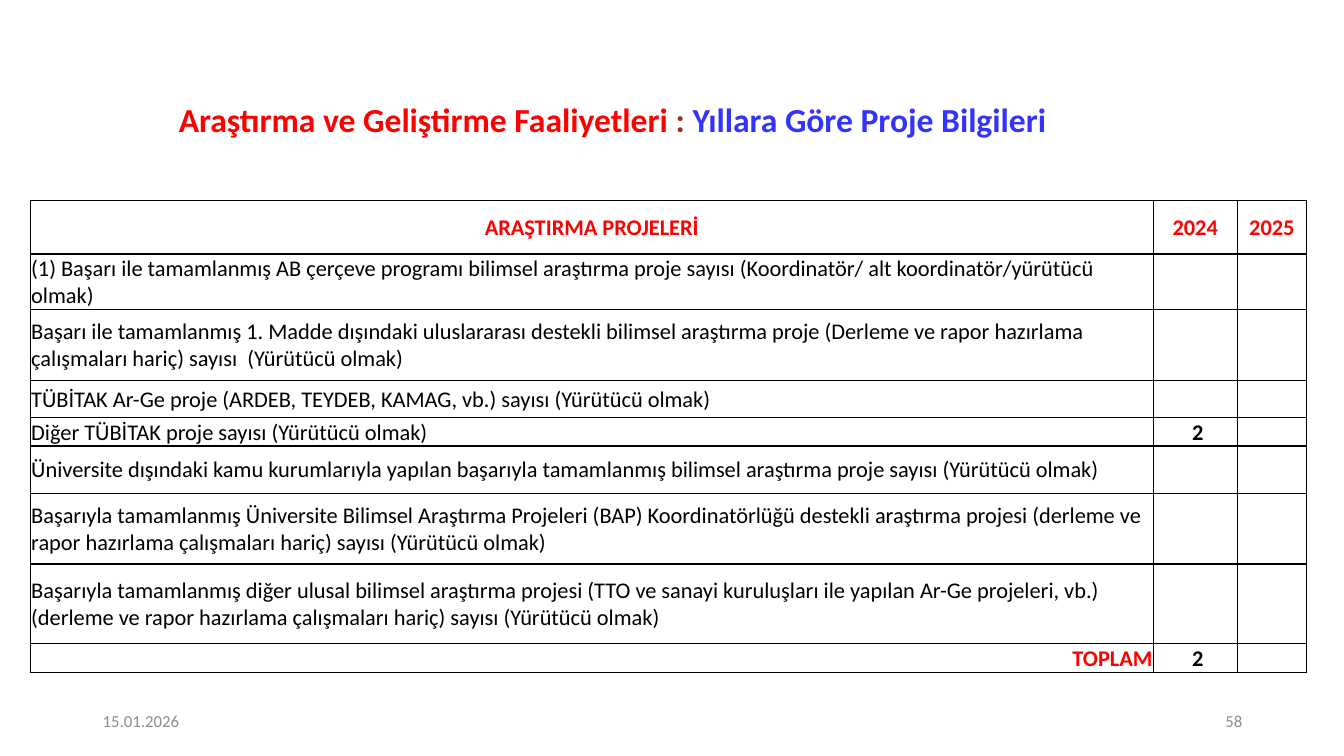
from typing import NamedTuple

from pptx import Presentation
from pptx.dml.color import RGBColor
from pptx.enum.text import MSO_ANCHOR as ANCHOR, PP_ALIGN as ALIGN
from pptx.oxml.xmlchemy import OxmlElement
from pptx.util import Inches, Pt

FONT = "Calibri"
RED = RGBColor(0xFF, 0x00, 0x00)
MAROON = RGBColor(0x96, 0x2E, 0x2E)
BLUE = RGBColor(0x33, 0x33, 0xFF)
BLACK = RGBColor(0x00, 0x00, 0x00)
GRAY = RGBColor(0x8C, 0x8C, 0x8C)


class TitlePart(NamedTuple):
    text: str
    color: RGBColor


class FooterItem(NamedTuple):
    text: str
    left: float
    align: ALIGN


class ProjectRow(NamedTuple):
    height: float
    label: str
    y2024: str = ""
    y2025: str = ""
    align: ALIGN = ALIGN.LEFT
    label_color: RGBColor = BLACK
    year_color: RGBColor = BLACK


TITLE = [
    TitlePart("Araştırma ve Geliştirme Faaliyetleri ", RED),
    TitlePart(": ", MAROON),
    TitlePart("Yıllara Göre Proje Bilgileri", BLUE),
]
FOOTER = [
    FooterItem("15.01.2026", 0.92, ALIGN.LEFT),
    FooterItem("58", 9.42, ALIGN.RIGHT),
]
COL_WIDTHS = [11.14, 0.83, 0.69]
ROWS = [
    ProjectRow(0.53, "ARAŞTIRMA PROJELERİ", "2024", "2025", ALIGN.CENTER, RED, RED),
    ProjectRow(0.52, "(1) Başarı ile tamamlanmış AB çerçeve programı bilimsel araştırma "
               "proje sayısı (Koordinatör/ alt koordinatör/yürütücü olmak)"),
    ProjectRow(0.7, "Başarı ile tamamlanmış 1. Madde dışındaki uluslararası destekli "
               "bilimsel araştırma proje (Derleme ve rapor hazırlama çalışmaları hariç) "
               "sayısı  (Yürütücü olmak)"),
    ProjectRow(0.37, "TÜBİTAK Ar-Ge proje (ARDEB, TEYDEB, KAMAG, vb.) sayısı (Yürütücü olmak)"),
    ProjectRow(0.27, "Diğer TÜBİTAK proje sayısı (Yürütücü olmak)", " 2"),
    ProjectRow(0.47, "Üniversite dışındaki kamu kurumlarıyla yapılan başarıyla tamamlanmış "
               "bilimsel araştırma proje sayısı (Yürütücü olmak)"),
    ProjectRow(0.7, "Başarıyla tamamlanmış Üniversite Bilimsel Araştırma Projeleri (BAP) "
               "Koordinatörlüğü destekli araştırma projesi (derleme ve rapor hazırlama "
               "çalışmaları hariç) sayısı (Yürütücü olmak)"),
    ProjectRow(0.79, "Başarıyla tamamlanmış diğer ulusal bilimsel araştırma projesi (TTO ve "
               "sanayi kuruluşları ile yapılan Ar-Ge projeleri, vb.) (derleme ve rapor "
               "hazırlama çalışmaları hariç) sayısı (Yürütücü olmak)"),
    ProjectRow(0.29, "TOPLAM", " 2", align=ALIGN.RIGHT, label_color=RED),
]


def style_run(r, size: float, color: RGBColor, bold: bool = False) -> None:
    r.font.name = FONT
    r.font.size = Pt(size)
    r.font.bold = bold
    r.font.color.rgb = color


def add_title(slide) -> None:
    sp = slide.shapes.title
    sp.left, sp.top, sp.width, sp.height = (Inches(v) for v in (0.4, 0.89, 11.35, 0.64))
    tf = sp.text_frame
    tf.vertical_anchor = ANCHOR.MIDDLE
    p = tf.paragraphs[0]
    p.alignment = ALIGN.CENTER
    p.line_spacing = 0.9
    for part in TITLE:
        r = p.add_run()
        r.text = part.text
        style_run(r, 24, part.color, True)


def add_footer(slide, item: FooterItem) -> None:
    sp = slide.shapes.add_textbox(Inches(item.left), Inches(6.95), Inches(3), Inches(0.4))
    tf = sp.text_frame
    tf.word_wrap = True
    tf.vertical_anchor = ANCHOR.MIDDLE
    tf.text = item.text
    p = tf.paragraphs[0]
    p.alignment = item.align
    style_run(p.runs[0], 12, GRAY)


def add_borders(cell) -> None:
    tc_pr = cell._tc.get_or_add_tcPr()
    for side in ("L", "R", "T", "B"):
        ln = OxmlElement(f"a:ln{side}")
        ln.set("w", str(Pt(1)))
        fill = OxmlElement("a:solidFill")
        clr = OxmlElement("a:srgbClr")
        clr.set("val", str(BLACK))
        fill.append(clr)
        ln.append(fill)
        tc_pr.append(ln)


def fill_cell(cell, text: str, align: ALIGN, color: RGBColor, bold: bool) -> None:
    add_borders(cell)
    cell.fill.background()
    cell.margin_left = cell.margin_right = cell.margin_top = Inches(0.01)
    cell.margin_bottom = 0
    cell.vertical_anchor = ANCHOR.MIDDLE
    p = cell.text_frame.paragraphs[0]
    p.alignment = align
    if text:
        p.text = text
        style_run(p.runs[0], 16, color, bold)
    else:
        end = OxmlElement("a:endParaRPr")
        end.set("sz", "1600")
        p._p.append(end)


def add_project_table(slide) -> None:
    frame = slide.shapes.add_table(len(ROWS), len(COL_WIDTHS), Inches(0.3), Inches(1.99),
                                   Inches(sum(COL_WIDTHS)),
                                   Inches(sum(row.height for row in ROWS)))
    table = frame.table
    table.first_row = table.horz_banding = False
    for col, width in zip(table.columns, COL_WIDTHS):
        col.width = Inches(width)
    for i, row in enumerate(ROWS):
        table.rows[i].height = Inches(row.height)
        fill_cell(table.cell(i, 0), row.label, row.align, row.label_color,
                  row.label_color == RED)
        for j, value in enumerate((row.y2024, row.y2025), start=1):
            fill_cell(table.cell(i, j), value, ALIGN.CENTER, row.year_color, True)


def main() -> None:
    prs = Presentation()
    prs.slide_width, prs.slide_height = Inches(13.33), Inches(7.5)
    slide = prs.slides.add_slide(prs.slide_layouts[5])
    add_title(slide)
    add_project_table(slide)
    for item in FOOTER:
        add_footer(slide, item)
    prs.save("out.pptx")


if __name__ == "__main__":
    main()
